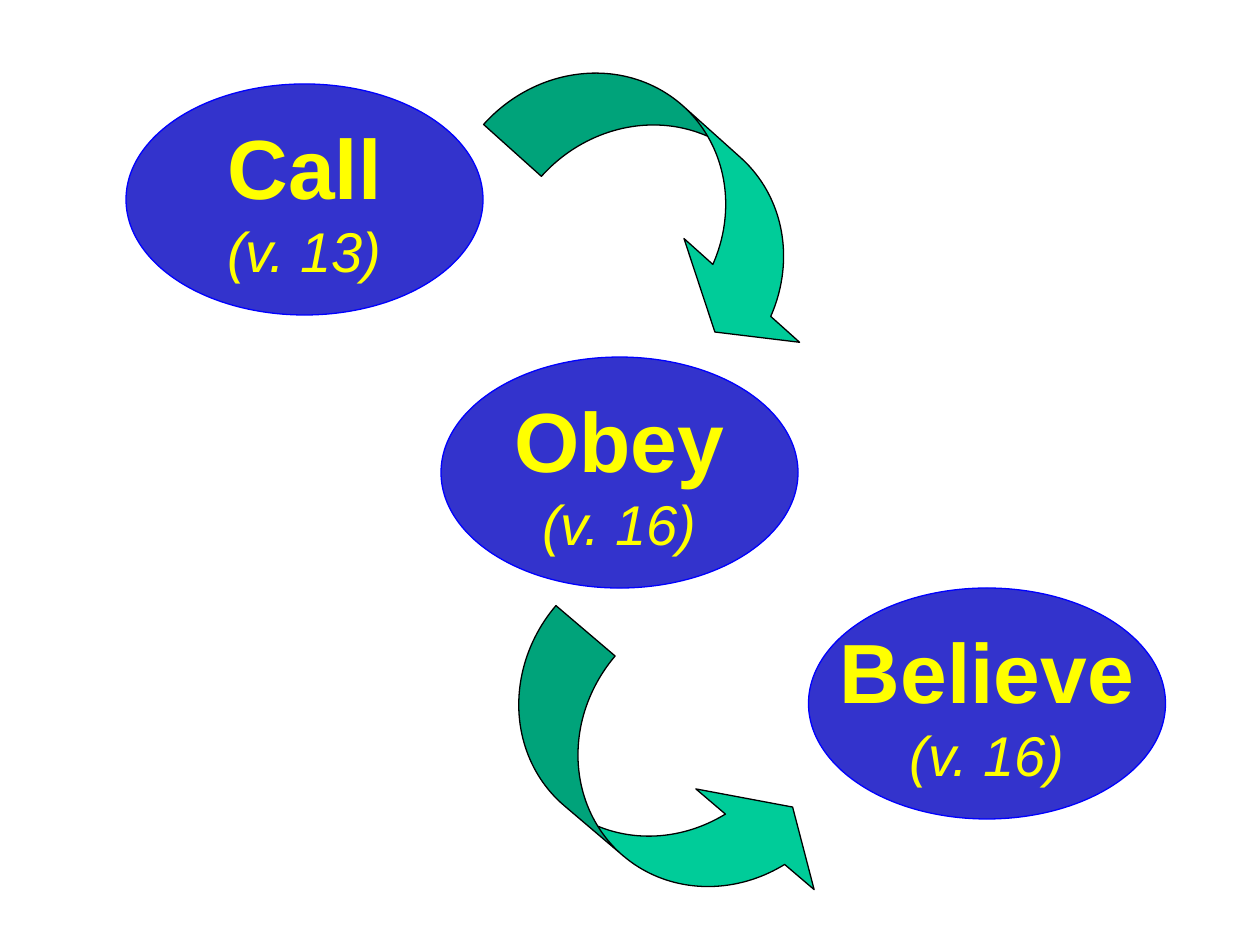
"""Build a slide of three linked steps: Call, Obey, Believe."""
from pptx import Presentation
from pptx.dml import color
from pptx.enum import shapes, text
from pptx.util import Pt


def rgb(value):
    return color.RGBColor.from_string(value)


class StepSlide:
    font = "Arial"
    yellow, blue, edge = "FFFF00", "3333CC", "0000FF"
    green, black = "00CC99", "000000"
    oval_size = 204, 132
    arrow_size = 222, 84
    bend = 0.529, 1.057, 0.333

    def __init__(self, page):
        self.page = page

    def shape(self, kind, corner, size, fill, line):
        shape = self.page.shapes.add_shape(kind, *map(Pt, corner + size))
        shape.shadow.inherit = False
        shape.fill.solid()
        shape.fill.fore_color.rgb = rgb(fill)
        shape.line.color.rgb = rgb(line)
        shape.line.width = Pt(0.75)
        return shape

    def step(self, corner, title, verse):
        oval = self.shape(shapes.MSO_SHAPE.OVAL, corner, self.oval_size, self.blue, self.edge)
        frame = oval.text_frame
        frame.word_wrap = False
        frame.vertical_anchor = text.MSO_ANCHOR.MIDDLE
        self.line(frame.paragraphs[0], title, 48, bold=True)
        self.line(frame.add_paragraph(), verse, 32, italic=True)

    def line(self, para, words, size, bold=False, italic=False):
        para.text = words
        para.alignment = text.PP_ALIGN.CENTER
        font = para.font
        font.name, font.size = self.font, Pt(size)
        font.bold, font.italic = bold, italic
        font.color.rgb = rgb(self.yellow)

    def arrow(self, kind, corner, angle):
        arrow = self.shape(kind, corner, self.arrow_size, self.green, self.black)
        arrow.rotation = angle
        for index, value in enumerate(self.bend):
            arrow.adjustments[index] = value


def main():
    deck = Presentation()
    deck.slide_width, deck.slide_height = Pt(720), Pt(540)
    slide = StepSlide(deck.slides.add_slide(deck.slide_layouts[6]))
    slide.step((72, 48), "Call", "(v. 13)")
    slide.step((252, 204), "Obey", "(v. 16)")
    slide.step((462, 336), "Believe", "(v. 16)")
    slide.arrow(shapes.MSO_SHAPE.CURVED_DOWN_ARROW, (276, 72), 41.9)
    slide.arrow(shapes.MSO_SHAPE.CURVED_UP_ARROW, (264, 408), 40.4)
    deck.save("out.pptx")


if __name__ == "__main__":
    main()
